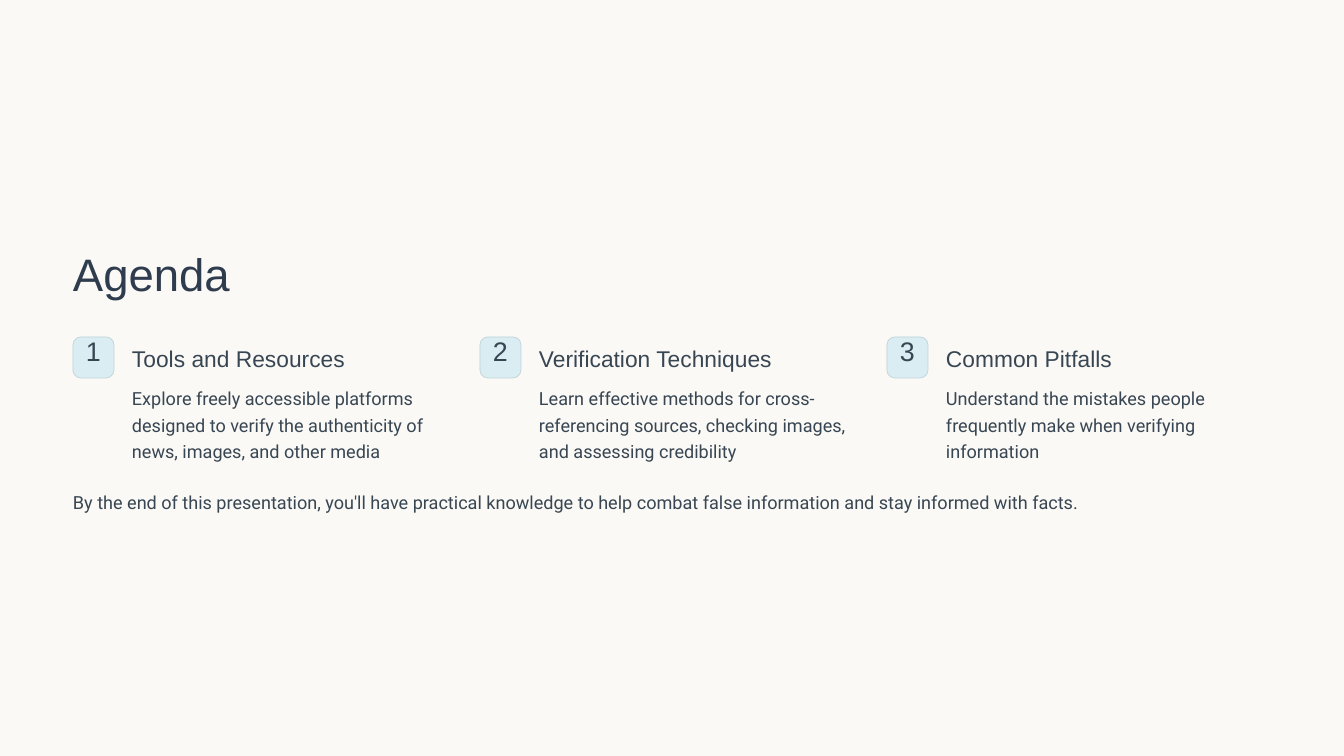
from dataclasses import dataclass

from pptx import Presentation
from pptx.dml.color import RGBColor
from pptx.enum.shapes import MSO_SHAPE
from pptx.enum.text import MSO_ANCHOR, MSO_AUTO_SIZE, PP_ALIGN
from pptx.util import Emu, Pt

ROUNDED = MSO_SHAPE.ROUNDED_RECTANGLE
TOP = MSO_ANCHOR.TOP
NO_AUTOFIT = MSO_AUTO_SIZE.NONE
LEFT, CENTER = PP_ALIGN.LEFT, PP_ALIGN.CENTER

EMU_PER_PX = 914400 / 84


@dataclass(frozen=True)
class Theme:
    background: str = "FAF9F5"
    title: str = "2E3C4E"
    text: str = "384653"
    badge_fill: str = "D9EDF2"
    badge_line: str = "BFD3D8"
    heading_font: str = "Arial"
    body_font: str = "Roboto"
    title_size: float = 39
    number_size: float = 23
    heading_size: float = 19.5
    body_size: float = 15.5


THEME = Theme()

# Layout in px
MARGIN = 73
COLUMN_STEP = 407
BADGE_TOP, BADGE_SIZE = 337, 41
TEXT_INDENT = 59

TOPICS = [
    ("Tools and Resources",
     "Explore freely accessible platforms designed to verify the "
     "authenticity of news, images, and other media"),
    ("Verification Techniques",
     "Learn effective methods for cross-referencing sources, checking "
     "images, and assessing credibility"),
    ("Common Pitfalls",
     "Understand the mistakes people frequently make when verifying "
     "information"),
]
CLOSING = ("By the end of this presentation, you'll have practical knowledge to "
           "help combat false information and stay informed with facts.")


def px(value):
    return Emu(round(value * EMU_PER_PX))


def color(value):
    return RGBColor.from_string(value)


def write(shape, text, *, size=THEME.body_size, font=THEME.body_font,
          fill=THEME.text, leading=23, align=LEFT, wrap=True, top=0):
    """Put one formatted paragraph into a shape."""
    frame = shape.text_frame
    frame.auto_size = NO_AUTOFIT
    frame.word_wrap = wrap
    frame.vertical_anchor = TOP
    frame.margin_left = frame.margin_right = frame.margin_bottom = 0
    frame.margin_top = px(top)
    paragraph = frame.paragraphs[0]
    paragraph.text = text
    paragraph.alignment = align
    paragraph.line_spacing = Pt(leading)
    paragraph.space_before = Pt(0)
    paragraph.font.size = Pt(size)
    paragraph.font.name = font
    paragraph.font.color.rgb = color(fill)


def add_title(slide, text):
    title = slide.shapes.title
    title.left, title.top, title.width, title.height = map(px, (MARGIN, 244, 456, 57))
    write(title, text, size=THEME.title_size, font=THEME.heading_font,
          fill=THEME.title, leading=48.5, wrap=False)


def add_text(slide, box, text, **style):
    write(slide.shapes.add_textbox(*map(px, box)), text, **style)


def add_badge(slide, left, number):
    badge = slide.shapes.add_shape(
        ROUNDED, *map(px, (left, BADGE_TOP, BADGE_SIZE, BADGE_SIZE)))
    badge.adjustments[0] = 0.19
    badge.shadow.inherit = False
    badge.fill.solid()
    badge.fill.fore_color.rgb = color(THEME.badge_fill)
    badge.line.color.rgb = color(THEME.badge_line)
    badge.line.width = Pt(0.6)
    write(badge, str(number), size=THEME.number_size, font=THEME.heading_font,
          align=CENTER, wrap=True, top=1)


def add_topic(slide, index, heading, description):
    left = MARGIN + index * COLUMN_STEP
    add_badge(slide, left, index + 1)
    add_text(slide, (left + TEXT_INDENT, 344, 239, 29), heading,
             size=THEME.heading_size, font=THEME.heading_font,
             leading=24, wrap=False)
    add_text(slide, (left + TEXT_INDENT, 382, 325, 82), description)


def main():
    presentation = Presentation()
    presentation.slide_width, presentation.slide_height = px(1344), px(756)
    title_only = presentation.slide_layouts[5]
    slide = presentation.slides.add_slide(title_only)

    # Background
    slide.background.fill.solid()
    slide.background.fill.fore_color.rgb = color(THEME.background)

    # Title, numbered topics and closing sentence
    add_title(slide, "Agenda")
    for index, (heading, description) in enumerate(TOPICS):
        add_topic(slide, index, heading, description)
    add_text(slide, (MARGIN, 486, 1198, 28), CLOSING, wrap=False)

    presentation.save("out.pptx")


if __name__ == "__main__":
    main()
